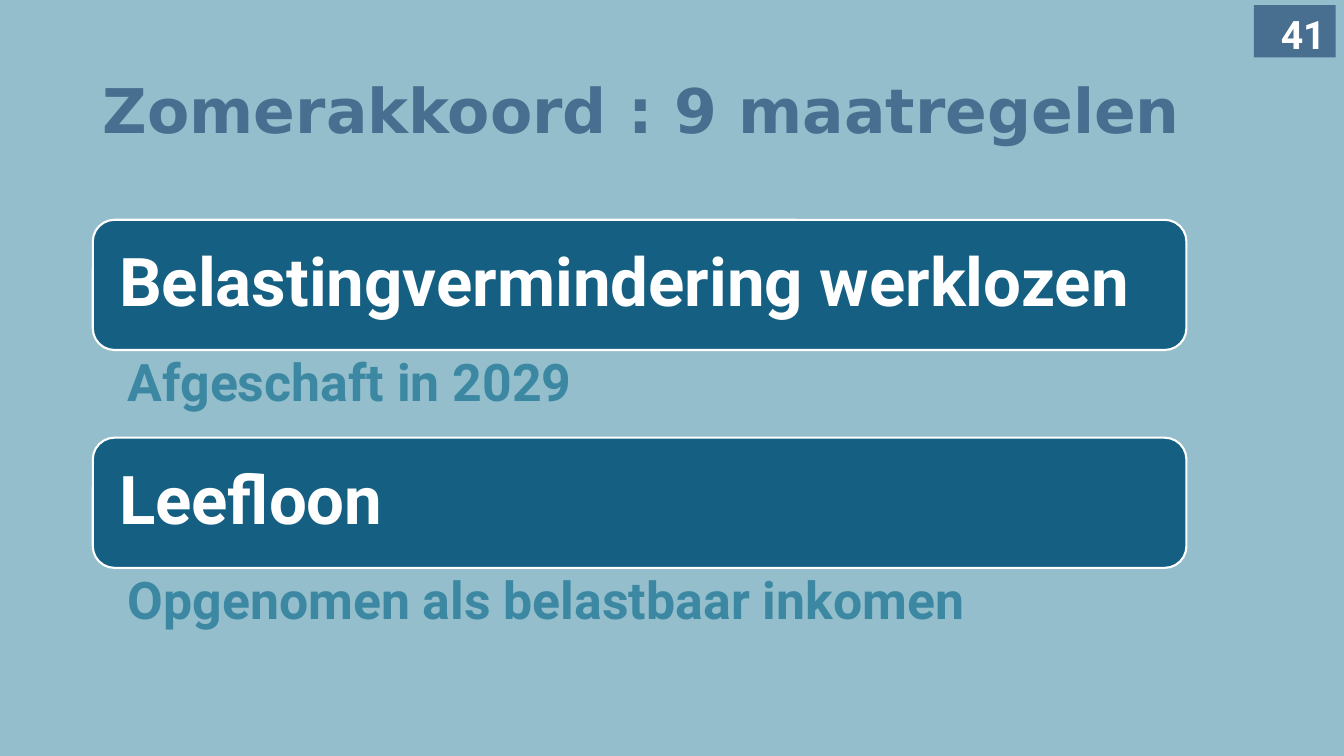
from dataclasses import dataclass

from pptx import Presentation
from pptx.dml.color import RGBColor
from pptx.enum.shapes import MSO_SHAPE as Shape
from pptx.enum.text import MSO_ANCHOR as Anchor, MSO_AUTO_SIZE as AutoSize, PP_ALIGN as Align
from pptx.util import Cm, Pt


@dataclass(frozen=True)
class Theme:
    background: str = "94BECC"
    slate: str = "496F90"
    bar: str = "156082"
    detail: str = "3C88A3"
    white: str = "FFFFFF"
    title_font: str = "DejaVu Sans"
    body_font: str = "Roboto"
    title_size: int = 44
    bar_size: int = 48
    detail_size: int = 37
    number_size: int = 28


theme = Theme()


def write(shape, text, size, color, font_name=theme.body_font, align=Align.LEFT,
          anchor=Anchor.TOP, spacing=0.9, inset=(0.25, 0.13)):
    """Put one bold paragraph in the shape; inset is horizontal, vertical in cm."""
    frame = shape.text_frame
    frame.word_wrap = True
    frame.auto_size = AutoSize.NONE
    frame.vertical_anchor = anchor
    frame.margin_left = frame.margin_right = Cm(inset[0])
    frame.margin_top = frame.margin_bottom = Cm(inset[1])
    paragraph = frame.paragraphs[0]
    paragraph.text = text
    paragraph.alignment = align
    paragraph.line_spacing = spacing
    paragraph.font.name = font_name
    paragraph.font.size = Pt(size)
    paragraph.font.bold = True
    paragraph.font.color.rgb = RGBColor.from_string(color)


def add_block(kind, left, top, width, height, fill):
    shape = slide.shapes.add_shape(kind, Cm(left), Cm(top), Cm(width), Cm(height))
    shape.shadow.inherit = False
    shape.fill.solid()
    shape.fill.fore_color.rgb = RGBColor.from_string(fill)
    shape.line.fill.background()
    return shape


presentation = Presentation()
presentation.slide_width = Cm(33.87)
presentation.slide_height = Cm(19.05)
slide = presentation.slides.add_slide(presentation.slide_layouts.get_by_name("Title Only"))
slide.background.fill.solid()
slide.background.fill.fore_color.rgb = RGBColor.from_string(theme.background)

title = slide.shapes.title
title.left, title.top, title.width, title.height = Cm(2.34), Cm(1.02), Cm(33.87), Cm(3.68)
write(title, "Zomerakkoord : 9 maatregelen", theme.title_size, theme.slate,
      font_name=theme.title_font, anchor=Anchor.MIDDLE)

measures = [
    ("Belastingvermindering werklozen", "Afgeschaft in 2029"),
    ("Leefloon", "Opgenomen als belastbaar inkomen"),
]
left, first_top, width = 2.34, 5.54, 27.56
bar_height, detail_height = 3.28, 2.21

for index, (measure, detail) in enumerate(measures):
    top = first_top + index * (bar_height + detail_height)
    bar = add_block(Shape.ROUNDED_RECTANGLE, left, top, width, bar_height, theme.bar)
    bar.line.color.rgb = RGBColor.from_string(theme.white)
    bar.line.width = Pt(1.5)
    write(bar, measure, theme.bar_size, theme.white, anchor=Anchor.MIDDLE, inset=(0.5, 0.5))
    # The rounded corners already push the text in by 0.16 cm.

    detail_box = slide.shapes.add_textbox(
        Cm(left), Cm(top + bar_height), Cm(width), Cm(detail_height))
    write(detail_box, detail, theme.detail_size, theme.detail, inset=(0.88, 0.18))

number_box = add_block(Shape.RECTANGLE, 31.6, 0.13, 2.06, 1.32, theme.slate)
write(number_box, "41", theme.number_size, theme.white, align=Align.RIGHT, spacing=1.0)

presentation.save("out.pptx")
